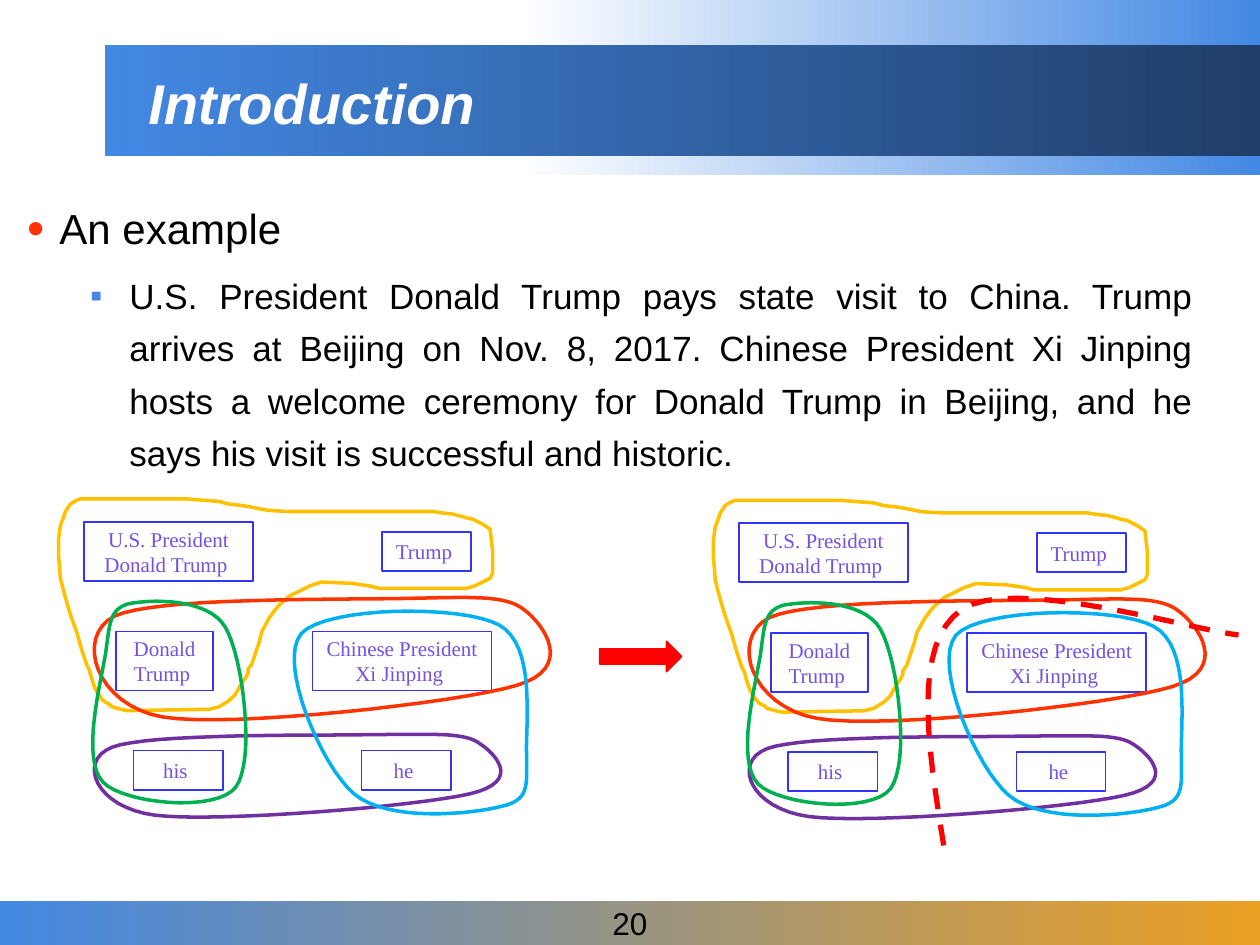
from lxml.etree import SubElement
from pptx import Presentation
from pptx.dml.color import RGBColor as Rgb
from pptx.enum.dml import MSO_LINE as Dash
from pptx.enum.shapes import MSO_SHAPE as Preset
from pptx.enum.text import MSO_ANCHOR as Anchor, PP_ALIGN as Align
from pptx.oxml.ns import qn
from pptx.util import Cm, Pt

COLORS = {
    "white": "FFFFFF", "black": "000000", "blue": "4388E3", "navy": "203E69",
    "amber": "ECA024", "border": "3333FF", "label": "7351E1", "yellow": "FFC000",
    "orange": "FF3300", "purple": "7030A0", "green": "00B050", "sky": "00B0F0",
    "red": "FF0000",
}
TITLE_FONT = {"name": "Arial", "size": Pt(32), "bold": True, "italic": True}
TOPIC_FONT = {"name": "Arial", "size": Pt(24)}
STORY_FONT = {"name": "Arial", "size": Pt(20)}
NUMBER_FONT = {"name": "Arial", "size": Pt(18)}
LABEL_FONT = {"name": "Times New Roman", "size": Pt(12)}

STORY = ("U.S. President Donald Trump pays state visit to China. Trump arrives at "
         "Beijing on Nov. 8, 2017. Chinese President Xi Jinping hosts a welcome "
         "ceremony for Donald Trump in Beijing, and he says his visit is "
         "successful and historic.")

MENTIONS = [
    ("U.S. President Donald Trump ", 1.7, 10.52, 3.4, 1.19),
    ("Trump ", 7.7, 10.72, 1.8, 0.79),
    ("Donald Trump ", 2.34, 12.73, 1.96, 1.19),
    ("Chinese President Xi Jinping ", 6.3, 12.73, 3.61, 1.19),
    ("his ", 2.69, 15.13, 1.8, 0.79),
    ("he ", 7.29, 15.13, 1.8, 0.79),
]

CURVE_UNIT = Cm(2.54) / 1000
TRUMP_OUTLINE = [
    (389, 420), (383, 416), (379, 414), (375, 412), (370, 411), (367, 410),
    (359, 408), (350, 407), (344, 406), (228, 406), (212, 405), (197, 402),
    (190, 401), (181, 400), (174, 398), (161, 397), (148, 396), (64, 396),
    (61, 397), (56, 400), (52, 406), (50, 412), (48, 417), (46.5, 428),
    (46.5, 440), (48, 459), (50, 467), (53, 478), (56, 488), (61, 502),
    (65, 516), (69, 528), (71, 532), (73, 539), (75, 545), (77, 549),
    (81, 555), (83, 557), (87, 559), (89, 561), (96, 563), (101, 564),
    (166, 563), (174, 561), (182, 556), (187, 551), (192, 542), (195, 538),
    (197, 534), (197, 531), (200, 527), (203, 518), (206, 509), (208, 501),
    (214, 490), (220, 482), (223, 479), (230, 473), (238, 469), (246, 465),
    (255, 462), (279, 463), (293, 465), (301, 467), (310, 467), (370, 467),
    (377, 465), (385, 461), (389, 459), (391, 455), (391, 437),
]
LOOPS = {
    "orange": [(416, 484), (401, 472), (375, 474), (321, 475), (267, 476), (123, 474),
               (91, 489), (59, 505), (76, 560), (129, 569), (182, 578), (363, 558),
               (410, 544), (457, 530), (431, 495), (416, 484)],
    "purple": [(379, 589), (366, 581), (342, 583), (294, 583), (246, 584), (118, 582),
               (89, 593), (61, 604), (76, 641), (123, 647), (171, 653), (331, 640),
               (373, 630), (416, 620), (392, 597), (379, 589)],
    "green": [(103, 479), (87, 483), (87, 495), (84, 518), (80, 542), (64, 603),
              (82, 621), (99, 638), (171, 645), (187, 625), (203, 604), (193, 522),
              (179, 498), (165, 474), (119, 476), (103, 479)],
    "sky": [(398, 640), (421, 635), (418, 623), (418, 599), (417, 575), (426, 512),
            (396, 496), (367, 480), (259, 481), (239, 503), (220, 526), (255, 608),
            (281, 630), (308, 653), (376, 646), (398, 640)],
}
CUT = [(749, 671), (736, 591), (724, 511), (763, 484), (802, 456), (946, 500), (983, 504)]


def color(name):
    return Rgb.from_string(COLORS[name])


def apply_format(target, values):
    for attribute, value in values.items():
        setattr(target, attribute, value)


def set_font(paragraph, values, ink):
    apply_format(paragraph.font, values)
    paragraph.font.color.rgb = color(ink)


def add_preset(slide, preset, box, fill, border=None):
    shape = slide.shapes.add_shape(preset, *map(Cm, box))
    shape.shadow.inherit = False
    shape.fill.solid()
    shape.fill.fore_color.rgb = color(fill)
    if border:
        shape.line.color.rgb = color(border)
        shape.line.width = Pt(1)
    else:
        shape.line.fill.background()
    return shape


def add_band(slide, box, start, end):
    band = add_preset(slide, Preset.RECTANGLE, box, start)
    band.fill.gradient()
    band.fill.gradient_angle = 0
    for stop, name in zip(band.fill.gradient_stops, (start, end)):
        stop.color.rgb = color(name)
    return band


def write_centered(shape, text, font, ink):
    frame = shape.text_frame
    apply_format(frame, {"word_wrap": True, "vertical_anchor": Anchor.MIDDLE})
    paragraph = frame.paragraphs[0]
    paragraph.text = text
    paragraph.alignment = Align.CENTER
    set_font(paragraph, font, ink)


def add_text_frame(slide, box, anchor):
    frame = slide.shapes.add_textbox(*map(Cm, box)).text_frame
    apply_format(frame, {"word_wrap": True, "vertical_anchor": anchor})
    return frame


def write_bullet(paragraph, text, sign, sign_color, percent, margin, hanging, layout, font):
    paragraph.text = text
    properties = paragraph._p.get_or_add_pPr()
    properties.set("marL", str(Cm(margin)))
    properties.set("indent", str(-Cm(hanging)))
    apply_format(paragraph, {"line_spacing": 1.25, **layout})
    tint = SubElement(properties, qn("a:buClr"))
    SubElement(tint, qn("a:srgbClr"), val=COLORS[sign_color])
    SubElement(properties, qn("a:buSzPct"), val=str(percent * 1000))
    SubElement(properties, qn("a:buFont"), typeface="Arial")
    SubElement(properties, qn("a:buChar"), char=sign)
    set_font(paragraph, font, "black")


def trace_bezier(points, steps=16):
    traced = [points[0]]
    for first in range(0, len(points) - 1, 3):
        corners = points[first:first + 4]
        for step in range(1, steps + 1):
            t = step / steps
            weights = ((1 - t) ** 3, 3 * t * (1 - t) ** 2, 3 * t * t * (1 - t), t ** 3)
            traced.append(tuple(sum(w * corner[axis] for w, corner in zip(weights, corners))
                                for axis in (0, 1)))
    return traced


def add_outline(slide, points, ink, width, dx=0, dy=0, closed=True):
    start, *rest = [(x * 10, y * 10) for x, y in points]
    builder = slide.shapes.build_freeform(*start, scale=CURVE_UNIT)
    builder.add_line_segments(rest, close=closed)
    outline = builder.convert_to_shape(Cm(dx), Cm(dy))
    outline.shadow.inherit = False
    outline.fill.background()
    outline.line.color.rgb = color(ink)
    outline.line.width = Pt(width)
    return outline


def add_mention_graph(slide, dx, dy):
    for text, left, top, width, height in MENTIONS:
        box = (left + dx, top + dy, width, height)
        mention = add_preset(slide, Preset.RECTANGLE, box, "white", "border")
        write_centered(mention, text, LABEL_FONT, "label")
    add_outline(slide, TRUMP_OUTLINE, "yellow", 2, dx, dy)
    for ink, points in LOOPS.items():
        add_outline(slide, trace_bezier(points), ink, 2, dx, dy)


def main():
    deck = Presentation()
    apply_format(deck, {"slide_width": Cm(25.4), "slide_height": Cm(19.05)})
    slide = deck.slides.add_slide(deck.slide_layouts[6])

    add_band(slide, (10.49, 0, 14.91, 3.53), "white", "blue")
    footer = add_band(slide, (0, 18.16, 25.4, 0.91), "blue", "amber")
    write_centered(footer, "20", NUMBER_FONT, "black")
    add_band(slide, (2.11, 0.91, 23.29, 2.24), "blue", "navy")

    body = add_text_frame(slide, (0.3, 3.71, 24, 14), Anchor.TOP)
    write_bullet(body.paragraphs[0], "An example", "•", "orange", 117, 0.65, 0.65,
                 {}, TOPIC_FONT)
    write_bullet(body.add_paragraph(), STORY, "▪", "blue", 100, 2.06, 0.79,
                 {"alignment": Align.JUSTIFY, "space_before": Pt(6)}, STORY_FONT)

    title = add_text_frame(slide, (2.74, 1.27, 22.23, 1.57), Anchor.MIDDLE).paragraphs[0]
    title.text = "Introduction"
    set_font(title, TITLE_FONT, "white")

    add_mention_graph(slide, 0, 0)
    add_preset(slide, Preset.RIGHT_ARROW, (12.09, 12.93, 1.65, 0.61), "red", "red")
    add_mention_graph(slide, 13.2, 0.03)
    cut = add_outline(slide, trace_bezier(CUT), "red", 3, closed=False)
    cut.line.dash_style = Dash.DASH

    deck.save("out.pptx")


if __name__ == "__main__":
    main()
